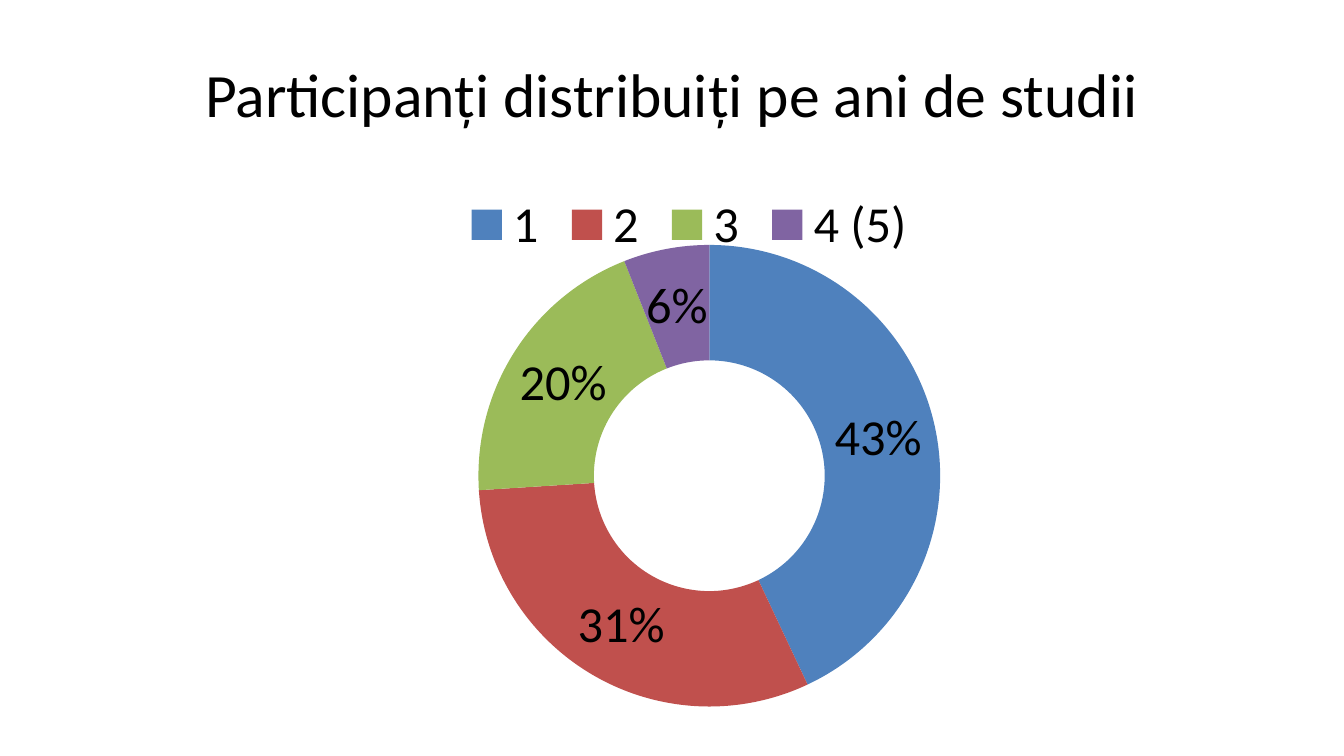
from pptx import Presentation
from pptx.chart.data import CategoryChartData
from pptx.dml.color import RGBColor
from pptx.enum.chart import XL_CHART_TYPE as ChartType, XL_LEGEND_POSITION as LegendPosition
from pptx.enum.text import MSO_ANCHOR as Anchor, PP_ALIGN as Align
from pptx.oxml import parse_xml
from pptx.oxml.ns import nsdecls
from pptx.util import Inches, Pt

COLORS = {
    "text": "000000",
    "1": "4F81BD",
    "2": "C0504D",
    "3": "9BBB59",
    "4 (5)": "8064A2",
}
SHARES = {"1": 43, "2": 31, "3": 20, "4 (5)": 6}
CHART_WIDTH, CHART_HEIGHT = 12.33, 5.58
PLOT_AREA = {
    "x": 4.07 / CHART_WIDTH,
    "y": 0.68 / CHART_HEIGHT,
    "w": 4.59 / CHART_WIDTH,
    "h": 4.58 / CHART_HEIGHT,
}
TITLE_FORMAT = {"name": "Calibri", "size": Pt(44), "bold": False}
CHART_FORMAT = {"name": "Calibri", "size": Pt(36), "bold": False}


def color(name):
    return RGBColor.from_string(COLORS[name])


def format_font(font, values):
    for name, value in values.items():
        setattr(font, name, value)
    font.color.rgb = color("text")


def set_title(page, text):
    title = page.shapes.title
    place = {"left": 0.67, "top": 0.3, "width": 11.99, "height": 1.25}
    for name, length in place.items():
        setattr(title, name, Inches(length))
    frame = title.text_frame
    frame.vertical_anchor = Anchor.MIDDLE
    para = frame.paragraphs[0]
    para.alignment = Align.CENTER
    span = para.add_run()
    span.text = text
    format_font(span.font, TITLE_FORMAT)


def place_plot(chart):
    """Fix the inner plot area, in fractions of the chart."""
    plot_area = chart._chartSpace.chart.plotArea
    for old in plot_area.findall("{*}layout"):
        plot_area.remove(old)
    modes = "".join(f'<c:{side}Mode val="edge"/>' for side in "xy")
    sizes = "".join(f'<c:{side} val="{part:.4f}"/>' for side, part in PLOT_AREA.items())
    plot_area.insert(0, parse_xml(
        f'<c:layout {nsdecls("c")}><c:manualLayout>'
        f'<c:layoutTarget val="inner"/>{modes}{sizes}'
        '</c:manualLayout></c:layout>'))


def add_doughnut(page):
    data = CategoryChartData()
    data.categories = list(SHARES)
    data.add_series("Series 1", list(SHARES.values()))
    chart = page.shapes.add_chart(
        ChartType.DOUGHNUT, Inches(0.67), Inches(1.75),
        Inches(CHART_WIDTH), Inches(CHART_HEIGHT), data).chart
    chart.has_title = False
    format_font(chart.font, CHART_FORMAT)

    chart.has_legend = True
    chart.legend.position = LegendPosition.TOP
    chart.legend.include_in_layout = False
    format_font(chart.legend.font, CHART_FORMAT)

    plot = chart.plots[0]
    plot.vary_by_categories = True
    plot._element.find("{*}holeSize").set("val", "50")
    series = plot.series[0]
    for index, category in enumerate(SHARES):
        fill = series.points[index].format.fill
        fill.solid()
        fill.fore_color.rgb = color(category)

    labels = series.data_labels
    labels.show_value = False
    labels.show_percentage = True
    labels.number_format = "0%"
    labels.number_format_is_linked = False
    format_font(labels.font, CHART_FORMAT)
    place_plot(chart)


def main():
    deck = Presentation()
    deck.slide_width = Inches(13.33)
    deck.slide_height = Inches(7.5)
    page = deck.slides.add_slide(deck.slide_layouts[5])
    set_title(page, "Participanți distribuiți pe ani de studii")
    add_doughnut(page)
    deck.save("out.pptx")


if __name__ == "__main__":
    main()
